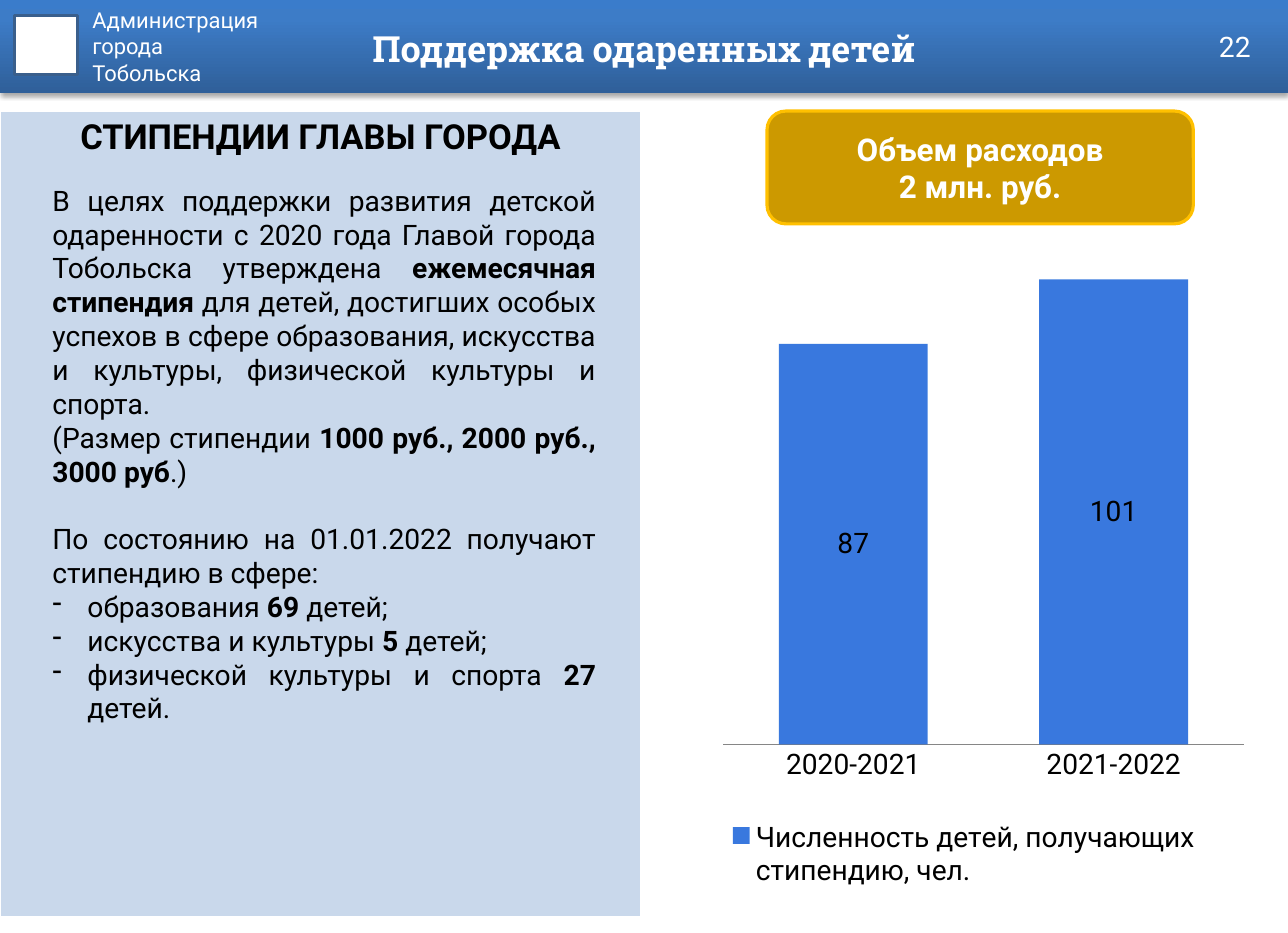
from copy import deepcopy

from lxml import etree
from pptx import Presentation
from pptx.chart.data import CategoryChartData
from pptx.dml.color import RGBColor
from pptx.enum import chart as charts, shapes, text
from pptx.oxml import parse_xml
from pptx.oxml.ns import nsdecls, qn
from pptx.util import Cm, Pt

COLORS = {
    "white": "FFFFFF", "black": "000000", "header_dark": "2F5F99",
    "header_mid": "3D7CC7", "header_light": "3A7CCB", "emblem_line": "3A5F8C",
    "panel": "B9CDE5", "bar": "1761D9", "axis": "868686",
    "gold": "CC9900", "gold_line": "FFC000",
}
BODY, HEADING = "Roboto", "Roboto Slab"
LEFT, CENTER, RIGHT, JUSTIFY = (
    text.PP_ALIGN.LEFT, text.PP_ALIGN.CENTER, text.PP_ALIGN.RIGHT, text.PP_ALIGN.JUSTIFY)

# Each paragraph is a list of spans; every second span is bold.
INTRO = [
    ["В целях поддержки развития детской одаренности с 2020 года Главой города "
     "Тобольска утверждена ", "ежемесячная стипендия ",
     "для детей, достигших особых успехов в сфере образования, искусства и "
     "культуры, физической культуры и спорта."],
    ["(Размер стипендии ", "1000 руб., 2000 руб., 3000 руб", ".)"],
    ["По состоянию на 01.01.2022 получают стипендию в сфере:"],
]
AREAS = [
    ["образования ", "69", " детей;"],
    ["искусства и культуры ", "5", " детей;"],
    ["физической культуры и спорта ", "27", " детей."],
]


def rgb(name):
    return RGBColor.from_string(COLORS[name])


def style(font, size, color="black", bold=False, face=BODY):
    font.name, font.size, font.bold = face, Pt(size), bold
    font.color.rgb = rgb(color)


def paint(fill, color, alpha=None):
    """Solid fill; alpha is the opacity in percent."""
    fill.solid()
    fill.fore_color.rgb = rgb(color)
    if alpha:
        clr = fill._xPr.find(".//" + qn("a:srgbClr"))
        etree.SubElement(clr, qn("a:alpha")).set("val", str(alpha * 1000))


def write(frame, lines, size, color="white", align=LEFT, bold=False, face=BODY):
    frame.word_wrap = True
    frame.text = "\n".join(lines)
    for para in frame.paragraphs:
        para.alignment = align
        for span in para.runs:
            style(span.font, size, color, bold, face)


def add_label(page, box, lines, size, anchor=text.MSO_ANCHOR.MIDDLE, **look):
    frame = page.shapes.add_textbox(*box).text_frame
    frame.margin_left = frame.margin_right = Cm(0.28)
    frame.margin_top = frame.margin_bottom = Cm(0.15)
    frame.vertical_anchor = anchor
    write(frame, lines, size, **look)
    return frame


def add_block(page, kind, box, line=None):
    block = page.shapes.add_shape(kind, *box)
    block.shadow.inherit = False
    if line:
        block.line.color.rgb = rgb(line)
        block.line.width = Pt(2)
    else:
        block.line.fill.background()
    return block


def add_header(page, left, top, width, height):
    band = add_block(page, shapes.MSO_SHAPE.RECTANGLE, (left, top, width, height))
    band.fill.gradient()
    band.fill.gradient_angle = 90
    stop_list = band.fill._fill._gradFill.gsLst
    stop_list.append(deepcopy(stop_list[-1]))
    stops = [(0, "header_dark"), (0.8, "header_mid"), (1, "header_light")]
    for stop, (position, color) in zip(band.fill.gradient_stops, stops):
        stop.position = position
        stop.color.rgb = rgb(color)
    band._element.spPr.find(qn("a:effectLst")).append(parse_xml(
        f'<a:outerShdw {nsdecls("a")} blurRad="39400" dist="22900" dir="5400000" '
        'rotWithShape="0"><a:srgbClr val="000000"><a:alpha val="35000"/>'
        '</a:srgbClr></a:outerShdw>'))

    emblem = add_block(page, shapes.MSO_SHAPE.RECTANGLE,
                       (left + Cm(0.33), top + Cm(0.35), Cm(1.42), Cm(1.32)), "emblem_line")
    paint(emblem.fill, "white")
    add_label(page, (left + Cm(1.8), top, Cm(6.8), Cm(2.7)),
              ["Администрация", "города", "Тобольска"], 14, text.MSO_ANCHOR.TOP)
    add_label(page, (left + Cm(5.9), top + Cm(0.2), Cm(17.22), Cm(1.78)),
              ["Поддержка одаренных детей"], 23, align=CENTER, bold=True, face=HEADING)
    add_label(page, (left + width - Cm(7.31), top + Cm(0.48), Cm(6.75), Cm(1.12)),
              ["22"], 18, align=RIGHT)


def add_panels(page, left, top, width, height):
    """Two-column table: a tinted heading cell and an empty white one."""
    table = page.shapes.add_table(1, 2, left, top, width, height).table
    table.horz_banding = False
    tinted, plain = table.rows[0].cells
    paint(tinted.fill, "panel", 76)
    paint(plain.fill, "white")
    tinted.margin_left = tinted.margin_right = Cm(0.28)
    tinted.margin_top = tinted.margin_bottom = Cm(0.15)
    write(tinted.text_frame, ["СТИПЕНДИИ ГЛАВЫ ГОРОДА"], 22, "black", CENTER, True)


def add_story(page, left, top, width, height):
    frame = add_label(page, (left, top, width, height), [""], 18, text.MSO_ANCHOR.TOP)
    for index, spans in enumerate(INTRO + AREAS):
        para = frame.add_paragraph() if index else frame.paragraphs[0]
        para.alignment = JUSTIFY
        if spans in AREAS:
            props = para._p.get_or_add_pPr()
            props.set("marL", str(Cm(0.79)))
            props.set("indent", str(-Cm(0.79)))
            etree.SubElement(props, qn("a:buFontTx"))
            etree.SubElement(props, qn("a:buChar")).set("char", "-")
        elif spans is INTRO[-1]:
            para.space_before = Pt(21.5)
        for number, words in enumerate(spans):
            span = para.add_run()
            span.text = words
            style(span.font, 18, bold=number % 2 == 1)


def add_budget(page, left, top, width, height):
    badge = add_block(page, shapes.MSO_SHAPE.ROUNDED_RECTANGLE,
                      (left, top, width, height), "gold_line")
    paint(badge.fill, "gold")
    badge.text_frame.vertical_anchor = text.MSO_ANCHOR.MIDDLE
    write(badge.text_frame, ["Объем расходов", "2 млн. руб."], 20, align=CENTER, bold=True)


def add_recipients_chart(page, left, top, width, height):
    data = CategoryChartData()
    data.categories = ["2020-2021", "2021-2022"]
    data.add_series("Численность детей, получающих стипендию, чел.", [87, 101])
    chart = page.shapes.add_chart(charts.XL_CHART_TYPE.COLUMN_STACKED,
                                  left, top, width, height, data).chart
    style(chart.font, 18)
    chart.has_title = False
    chart.has_legend = True
    chart.legend.position = charts.XL_LEGEND_POSITION.BOTTOM
    chart.legend.include_in_layout = False

    years, counts = chart.category_axis, chart.value_axis
    years.major_tick_mark = charts.XL_TICK_MARK.NONE
    years.format.line.color.rgb = rgb("axis")
    counts.visible = False
    counts.has_major_gridlines = False
    counts.minimum_scale, counts.maximum_scale, counts.major_unit = 0, 110, 5

    plot = chart.plots[0]
    plot.gap_width, plot.overlap, plot.vary_by_categories = 75, 100, False
    series = plot.series[0]
    paint(series.format.fill, "bar", 85)
    series.data_labels.show_value = True
    series.data_labels.position = charts.XL_LABEL_POSITION.CENTER

    area = chart._chartSpace.chart.plotArea
    for old in area.findall(qn("c:layout")):
        area.remove(old)
    layout = parse_xml(f'<c:layout {nsdecls("c")}><c:manualLayout/></c:layout>')
    for tag, value in [("layoutTarget", "inner"), ("xMode", "edge"), ("yMode", "edge"),
                       ("x", 0.07), ("y", 0.03), ("w", 0.93), ("h", 0.75)]:
        etree.SubElement(layout[0], qn("c:" + tag)).set("val", str(value))
    area.insert(0, layout)


def main():
    deck = Presentation()
    deck.slide_width, deck.slide_height = Cm(29), Cm(21)
    page = deck.slides.add_slide(deck.slide_layouts[6])
    add_header(page, 0, 0, deck.slide_width, Cm(2.1))
    add_panels(page, 0, Cm(2.5), Cm(28.86), Cm(18.13))
    add_story(page, Cm(0.9), Cm(3.97), Cm(12.8), Cm(13.36))
    add_recipients_chart(page, Cm(15.4), Cm(4.9), Cm(12.62), Cm(15.2))
    add_budget(page, Cm(17.27), Cm(2.5), Cm(9.6), Cm(2.54))
    deck.save("out.pptx")


if __name__ == "__main__":
    main()
